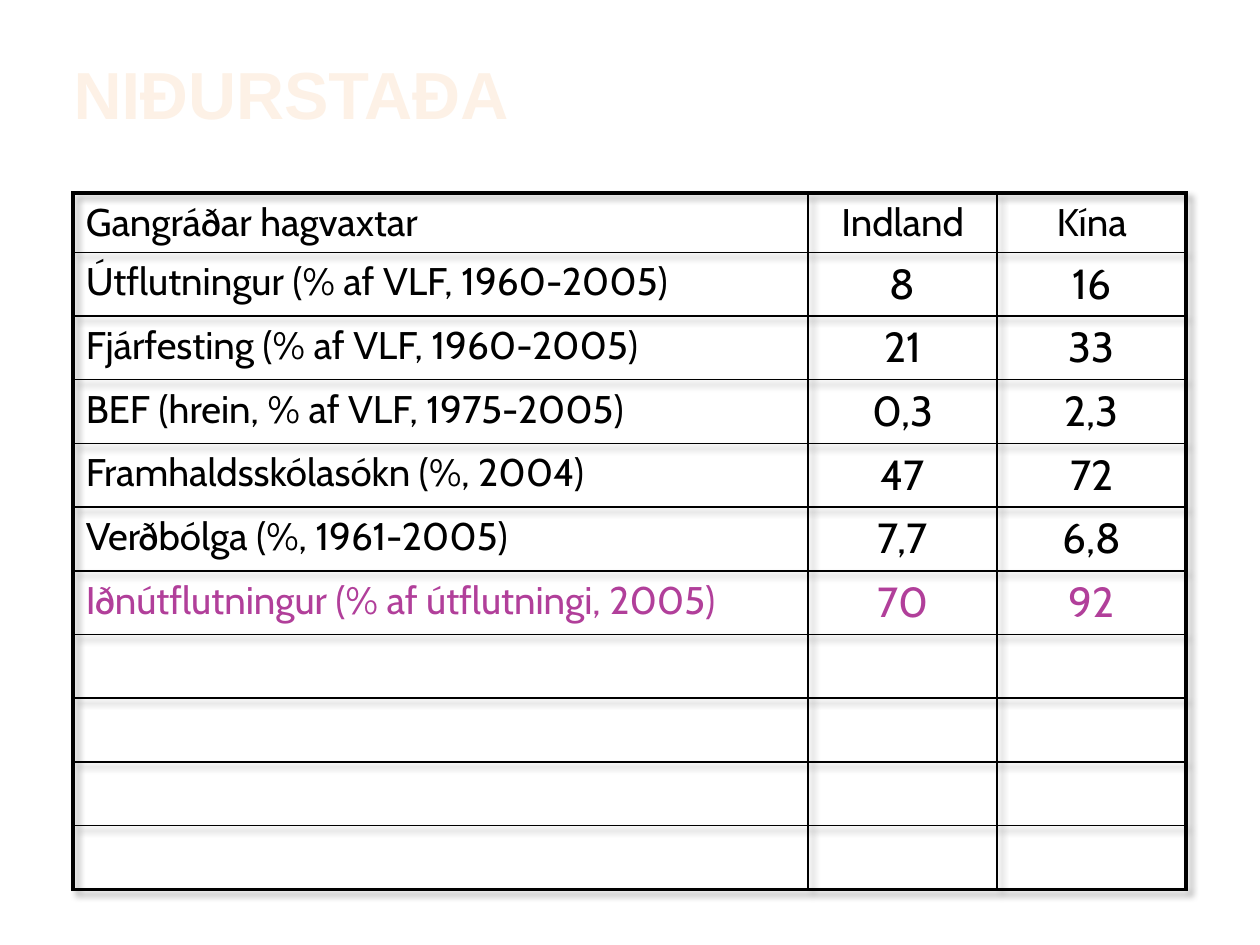
from lxml.etree import SubElement
from pptx import Presentation
from pptx.dml.color import RGBColor
from pptx.enum.text import MSO_ANCHOR, PP_ALIGN
from pptx.oxml import parse_xml
from pptx.oxml.ns import nsdecls, qn
from pptx.util import Pt

COLORS = {"title": "FDF1E6", "text": "000000", "accent": "B13F9A", "border": "000000"}
FONT, TITLE_FONT = "Cabin", "Arial"
TITLE = "NIÐURSTAÐA"
ROWS = [
    ("Gangráðar hagvaxtar", "Indland", "Kína"),
    ("Útflutningur (% af VLF, 1960-2005)", "8", "16"),
    ("Fjárfesting (% af VLF, 1960-2005)", "21", "33"),
    ("BEF (hrein, % af VLF, 1975-2005)", "0,3", "2,3"),
    ("Framhaldsskólasókn (%, 2004)", "47", "72"),
    ("Verðbólga (%, 1961-2005)", "7,7", "6,8"),
    ("Iðnútflutningur (% af útflutningi, 2005)", "70", "92"),
] + [("", "", "")] * 4
ACCENT_ROW = 6
COLUMN_WIDTHS = (420, 108, 108)
HEADER_HEIGHT, ROW_HEIGHT = 34, 36.4
TABLE_LEFT, TABLE_TOP = 41.8, 110.2
OUTER_LINE, INNER_LINE = 2.25, 1
NO_STYLE = "{2D5ABB26-0587-4C30-8999-92F81FD0307C}"
SHADOW = (
    f'<a:effectLst {nsdecls("a")}><a:outerShdw blurRad="50800" dist="50800" dir="2700000">'
    '<a:srgbClr val="000000"><a:alpha val="35000"/></a:srgbClr></a:outerShdw></a:effectLst>'
)


def style_font(font, name, size, color):
    font.name, font.size = name, Pt(size)
    font.color.rgb = RGBColor.from_string(COLORS[color])


def set_borders(cell, outer_sides):
    """Draw all four borders, heavier on the sides at the table's edge."""
    properties = cell._tc.get_or_add_tcPr()
    for index, (side, outer) in enumerate(zip("LRTB", outer_sides)):
        width = Pt(OUTER_LINE if outer else INNER_LINE)
        line = parse_xml(f'<a:ln{side} {nsdecls("a")} w="{width}"/>')
        fill = SubElement(line, qn("a:solidFill"))
        SubElement(fill, qn("a:srgbClr"), val=COLORS["border"])
        properties.insert(index, line)


def add_title(slide):
    title = slide.shapes.title
    title.left, title.top, title.width, title.height = Pt(42), Pt(29), Pt(636), Pt(48)
    frame = title.text_frame
    frame.text = TITLE
    frame.margin_left = frame.margin_right = frame.margin_top = frame.margin_bottom = 0
    frame.vertical_anchor = MSO_ANCHOR.MIDDLE
    paragraph = frame.paragraphs[0]
    paragraph.alignment = PP_ALIGN.LEFT
    font = paragraph.runs[0].font
    style_font(font, TITLE_FONT, 38, "title")
    font.bold = True


def add_growth_table(slide):
    heights = [HEADER_HEIGHT] + [ROW_HEIGHT] * (len(ROWS) - 1)
    table = slide.shapes.add_table(
        len(ROWS), len(COLUMN_WIDTHS), Pt(TABLE_LEFT), Pt(TABLE_TOP),
        Pt(sum(COLUMN_WIDTHS)), Pt(sum(heights)),
    ).table
    table.first_row = table.horz_banding = False
    properties = table._tbl.tblPr
    properties.find(qn("a:tableStyleId")).text = NO_STYLE
    properties.insert(0, parse_xml(SHADOW))
    for column, width in zip(table.columns, COLUMN_WIDTHS):
        column.width = Pt(width)
    for row, height in zip(table.rows, heights):
        row.height = Pt(height)

    last_row, last_column = len(ROWS) - 1, len(COLUMN_WIDTHS) - 1
    for r, values in enumerate(ROWS):
        for c, value in enumerate(values):
            cell = table.cell(r, c)
            cell.fill.background()
            set_borders(cell, (c == 0, c == last_column, r == 0, r == last_row))
            cell.text = value
            paragraph = cell.text_frame.paragraphs[0]
            paragraph.alignment = PP_ALIGN.CENTER if c else PP_ALIGN.LEFT
            size = 24 if r and c else 22
            color = "accent" if r == ACCENT_ROW else "text"
            for run in paragraph.runs:
                style_font(run.font, FONT, size, color)


def main():
    presentation = Presentation()
    presentation.slide_width, presentation.slide_height = Pt(720), Pt(540)
    slide = presentation.slides.add_slide(presentation.slide_layouts[5])
    add_title(slide)
    add_growth_table(slide)
    presentation.save("out.pptx")


if __name__ == "__main__":
    main()
